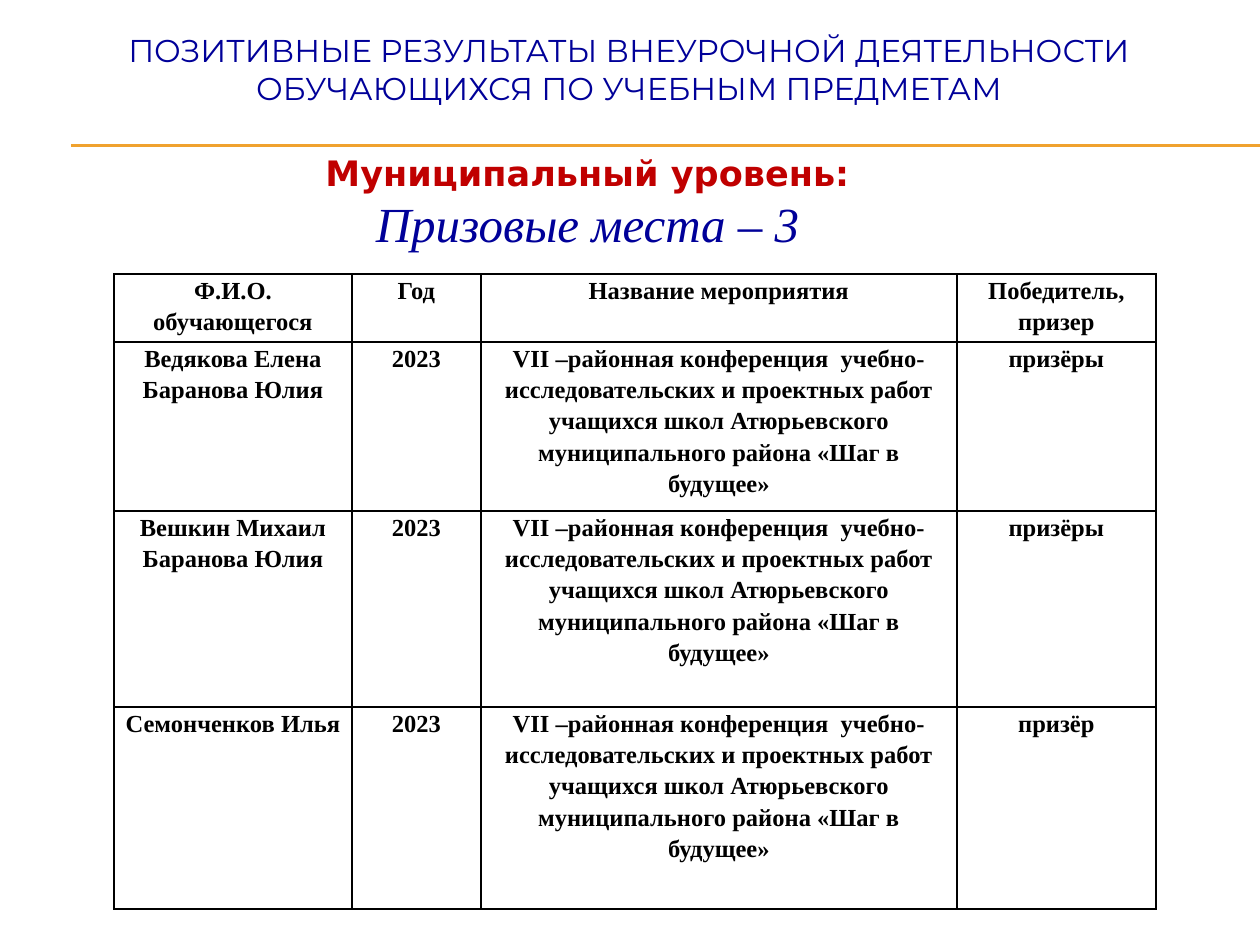
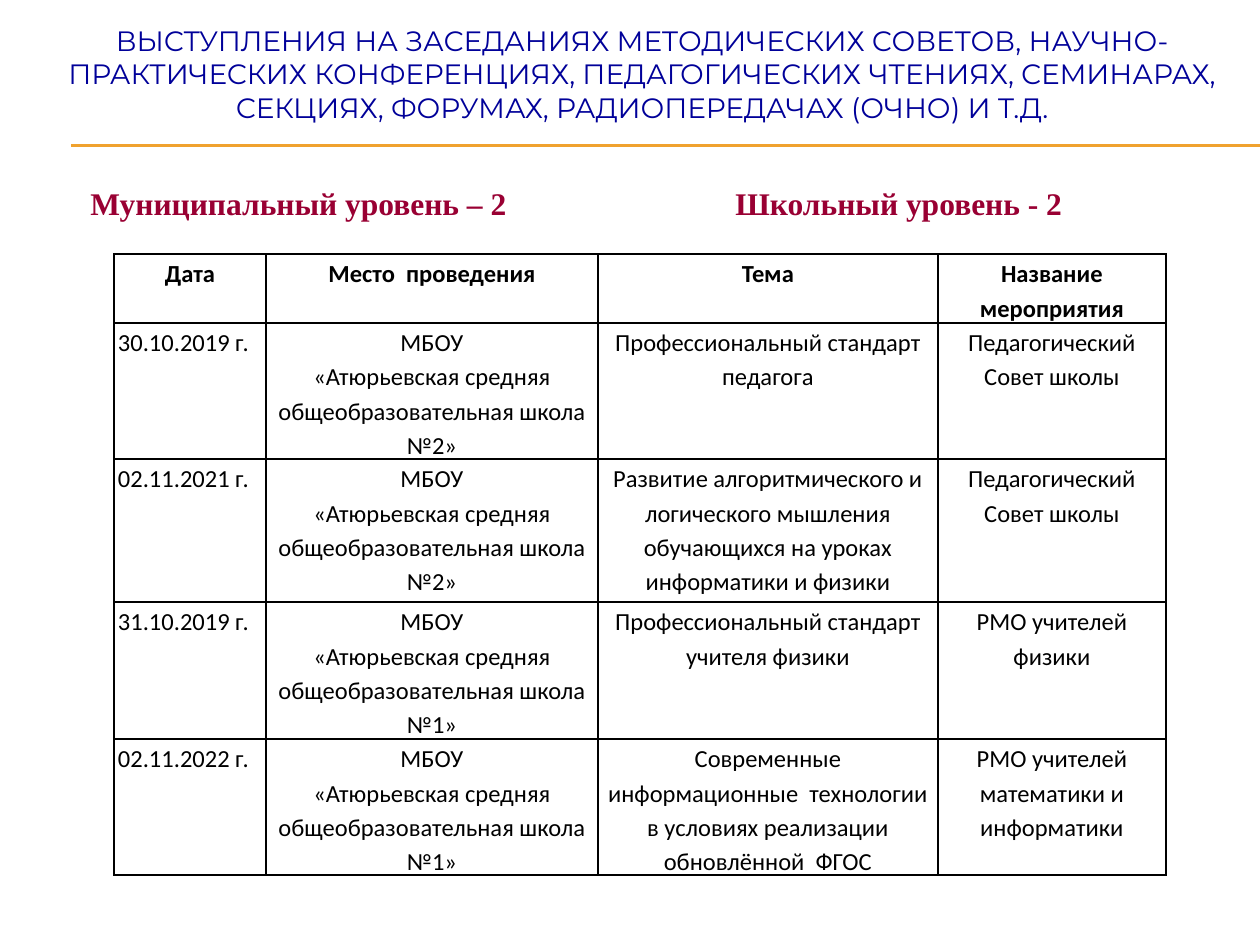
from dataclasses import dataclass

from lxml import etree
from pptx import Presentation
from pptx.dml.color import RGBColor
from pptx.enum.shapes import MSO_CONNECTOR
from pptx.enum.text import MSO_ANCHOR, MSO_AUTO_SIZE, PP_ALIGN
from pptx.oxml.ns import qn
from pptx.util import Emu, Pt

LEFT, CENTER = PP_ALIGN.LEFT, PP_ALIGN.CENTER
MIDDLE = MSO_ANCHOR.MIDDLE
NO_FIT = MSO_AUTO_SIZE.NONE
STRAIGHT = MSO_CONNECTOR.STRAIGHT

# Shared look
WIDE, HIGH = 1260, 945
NAVY, RED, WINE = "000099", "C00000", "990033"
GOLD, BLACK = "F0A22E", "000000"
SANS, SERIF = "Montserrat", "Times New Roman"


@dataclass(frozen=True)
class Box:
    x: int
    y: int
    w: int
    h: int


@dataclass(frozen=True)
class Style:
    font: str
    size: int
    color: str
    bold: bool = False
    italic: bool = False


@dataclass(frozen=True)
class Grid:
    x: int
    y: int
    cols: list[int]
    rows: list[int]
    font: str
    side: int
    top: int
    bold: bool
    align: PP_ALIGN
    cells: list[list[str]]


def px(num: int) -> Emu:
    return Emu(round(num * 914400 / 126))


def color(code: str) -> RGBColor:
    return RGBColor.from_string(code)


def place(box: Box) -> tuple[Emu, Emu, Emu, Emu]:
    return px(box.x), px(box.y), px(box.w), px(box.h)


def format_par(par, style: Style, align: PP_ALIGN = CENTER) -> None:
    par.alignment = align
    font = par.font
    font.name, font.size = style.font, Pt(style.size)
    font.bold, font.italic = style.bold, style.italic
    font.color.rgb = color(style.color)


def add_rule(slide, y: int) -> None:
    line = slide.shapes.add_connector(STRAIGHT, px(71), px(y), px(WIDE), px(y))
    line.line.color.rgb = color(GOLD)
    line.line.width = Pt(0.75)
    etree.SubElement(line._element.spPr, qn("a:effectLst"))


def add_page(deck, title: str, box: Box, size: int):
    """Add a slide with its title and the double gold rule."""
    slide = deck.slides.add_slide(deck.slide_layouts[5])
    for y in (145, 146):
        add_rule(slide, y)
    head = slide.shapes.title
    head.left, head.top, head.width, head.height = place(box)
    frame = head.text_frame
    frame.text = title
    frame.word_wrap, frame.auto_size = True, NO_FIT
    frame.vertical_anchor = MIDDLE
    format_par(frame.paragraphs[0], Style(SANS, size, NAVY))
    return slide


def add_text(slide, box: Box, lines: list[tuple[str, Style]],
             align: PP_ALIGN = CENTER, tab: int = 0) -> None:
    frame = slide.shapes.add_textbox(*place(box)).text_frame
    frame.word_wrap = True
    frame.text = "\n".join(text for text, _ in lines)
    for par, (_, style) in zip(frame.paragraphs, lines):
        if tab:
            stops = etree.SubElement(par._p.get_or_add_pPr(), qn("a:tabLst"))
            etree.SubElement(stops, qn("a:tab"), pos=str(px(tab)), algn="l")
        format_par(par, style, align)


def add_edges(cell) -> None:
    props = cell._tc.get_or_add_tcPr()
    for side in ("lnL", "lnR", "lnT", "lnB"):
        edge = etree.SubElement(props, qn(f"a:{side}"), w=str(Pt(1)))
        fill = etree.SubElement(edge, qn("a:solidFill"))
        etree.SubElement(fill, qn("a:srgbClr"), val=BLACK)


def add_grid(slide, grid: Grid) -> None:
    box = Box(grid.x, grid.y, sum(grid.cols), sum(grid.rows))
    table = slide.shapes.add_table(
        len(grid.rows), len(grid.cols), *place(box)).table
    table.first_row = table.horz_banding = False
    for col, wide in zip(table.columns, grid.cols):
        col.width = px(wide)
    for row, high in zip(table.rows, grid.rows):
        row.height = px(high)
    for r, texts in enumerate(grid.cells):
        style = Style(grid.font, 14, BLACK, bold=grid.bold or r == 0)
        for c, text in enumerate(texts):
            cell = table.cell(r, c)
            cell.margin_left = cell.margin_right = px(grid.side)
            cell.margin_top, cell.margin_bottom = px(grid.top), 0
            add_edges(cell)
            cell.fill.background()
            cell.text_frame.text = text
            for par in cell.text_frame.paragraphs:
                par.line_spacing = 1.15
                format_par(par, style, grid.align if r and not c else CENTER)


# Table texts
EVENT = ("VII –районная конференция  учебно-исследовательских и проектных "
         "работ учащихся школ Атюрьевского муниципального района "
         "«Шаг в будущее»")


def school(num: int) -> str:
    return f"МБОУ\v«Атюрьевская средняя общеобразовательная школа №{num}»"


PRIZES = Grid(
    114, 274, [238, 129, 476, 199], [68, 169, 196, 202], SERIF, 9, 0, True,
    CENTER, [
        ["Ф.И.О. обучающегося", "Год", "Название мероприятия",
         "Победитель, призер"],
        ["Ведякова Елена\nБаранова Юлия", "2023", EVENT, "призёры"],
        ["Вешкин Михаил\nБаранова Юлия", "2023", EVENT, "призёры"],
        ["Семонченков Илья", "2023", EVENT, "призёр"],
    ])

TALKS = Grid(
    114, 254, [152, 332, 340, 228], [69, 136, 143, 137, 136], "Calibri", 4, 1,
    False, LEFT, [
        ["Дата", "Место  проведения", "Тема", "Название мероприятия"],
        ["30.10.2019 г.", school(2), "Профессиональный стандарт педагога",
         "Педагогический Совет школы"],
        ["02.11.2021 г.", school(2),
         "Развитие алгоритмического и логического мышления обучающихся "
         "на уроках информатики и физики", "Педагогический Совет школы"],
        ["31.10.2019 г.", school(1),
         "Профессиональный стандарт учителя физики", "РМО учителей физики"],
        ["02.11.2022 г.", school(1),
         "Современные информационные  технологии в условиях реализации "
         "обновлённой  ФГОС", "РМО учителей математики и информатики"],
    ])


def main() -> None:
    deck = Presentation()
    deck.slide_width, deck.slide_height = px(WIDE), px(HIGH)

    # Pupils' prizes
    slide = add_page(
        deck, "ПОЗИТИВНЫЕ РЕЗУЛЬТАТЫ ВНЕУРОЧНОЙ ДЕЯТЕЛЬНОСТИ "
        "ОБУЧАЮЩИХСЯ ПО УЧЕБНЫМ ПРЕДМЕТАМ", Box(78, 0, 1102, 137), 18)
    add_text(slide, Box(243, 145, 689, 120), [
        ("Муниципальный уровень:", Style("DejaVu Sans", 20, RED, bold=True)),
        ("Призовые места – 3", Style(SERIF, 28, NAVY, italic=True)),
    ])
    add_grid(slide, PRIZES)

    # Teacher's talks
    slide = add_page(
        deck, "ВЫСТУПЛЕНИЯ НА ЗАСЕДАНИЯХ МЕТОДИЧЕСКИХ СОВЕТОВ, "
        "НАУЧНО-ПРАКТИЧЕСКИХ КОНФЕРЕНЦИЯХ, ПЕДАГОГИЧЕСКИХ ЧТЕНИЯХ, "
        "СЕМИНАРАХ, СЕКЦИЯХ, ФОРУМАХ, РАДИОПЕРЕДАЧАХ (ОЧНО) И Т.Д.",
        Box(25, 0, 1235, 147), 16)
    add_text(slide, Box(78, 178, 1113, 50), [
        ("Муниципальный уровень – 2\tШкольный уровень - 2",
         Style(SERIF, 18, WINE, bold=True)),
    ], LEFT, tab=645)
    add_grid(slide, TALKS)

    deck.save("out.pptx")


if __name__ == "__main__":
    main()
